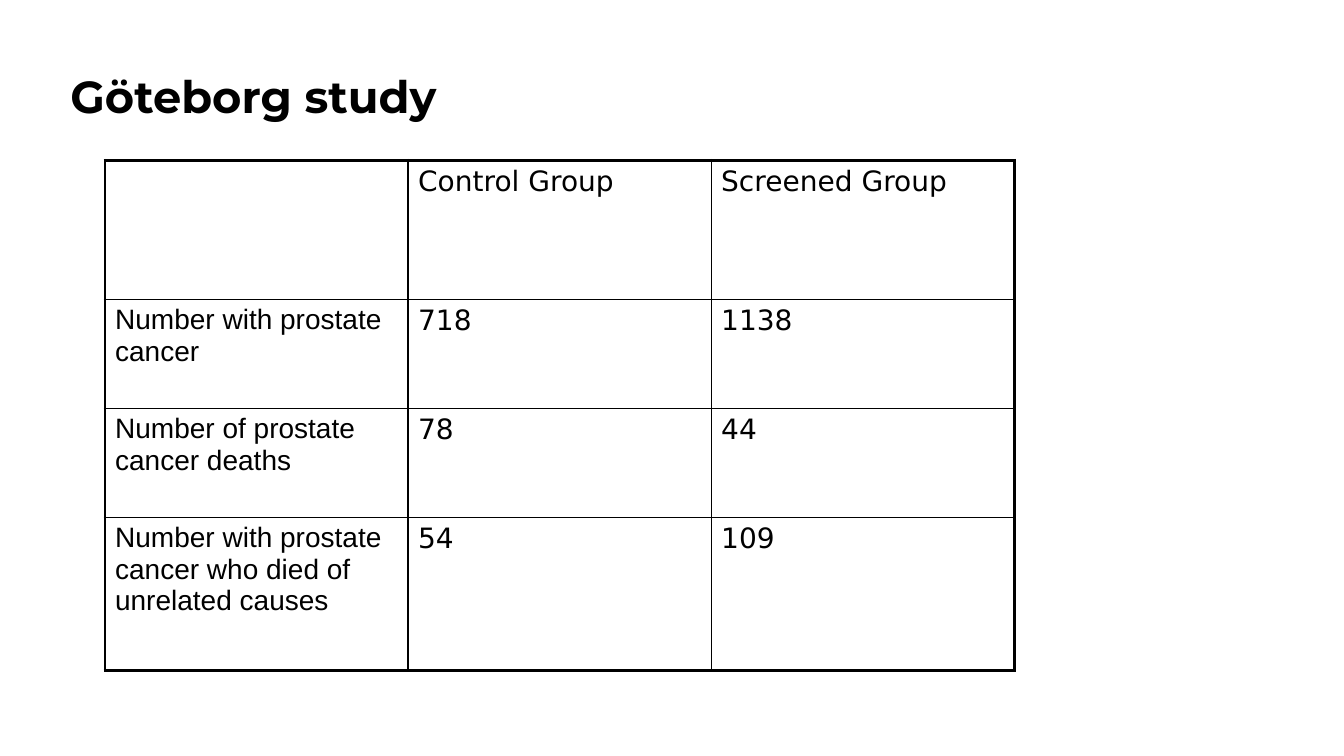
from lxml import etree
from pptx import Presentation
from pptx.dml.color import RGBColor
from pptx.enum.text import MSO_ANCHOR
from pptx.oxml.ns import qn
from pptx.util import Pt

BOTTOM = MSO_ANCHOR.BOTTOM
BLACK = RGBColor(0, 0, 0)
WHITE = RGBColor(255, 255, 255)

OUTER_LINE, INNER_LINE = 2.25, 1
COLUMN_WIDTH = 216.5
ROW_HEIGHTS = [99.4, 77.9, 77.9, 109.5]
ROWS = [
    ["", "Control Group", "Screened Group"],
    ["Number with prostate cancer", "718", "1138"],
    ["Number of prostate cancer deaths", "78", "44"],
    ["Number with prostate cancer who died of unrelated causes", "54", "109"],
]

TITLE_FONT = {"name": "Montserrat", "size": Pt(32), "bold": True}
LABEL_FONT = {"name": "Arial", "size": Pt(20), "bold": False}
VALUE_FONT = {"name": "DejaVu Sans", "size": Pt(20), "bold": False}


def write(frame, text, font_format):
    """Put one formatted paragraph into a text frame."""
    para = frame.paragraphs[0]
    span = para.add_run()
    span.text = text
    for name, value in font_format.items():
        setattr(span.font, name, value)
    span.font.color.rgb = BLACK
    return para


def add_title(page, text):
    box = page.shapes.add_textbox(Pt(43.2), Pt(37.4), Pt(816), Pt(54))
    frame = box.text_frame
    frame.word_wrap = True
    frame.vertical_anchor = BOTTOM
    write(frame, text, TITLE_FONT).line_spacing = 0.9


def set_borders(cell, widths):
    """Draw the cell's edges; widths run left, right, top, bottom."""
    properties = cell._tc.get_or_add_tcPr()
    for index, (side, width) in enumerate(zip("LRTB", widths)):
        line = etree.Element(qn(f"a:ln{side}"), w=str(Pt(width)))
        fill = etree.SubElement(line, qn("a:solidFill"))
        etree.SubElement(fill, qn("a:srgbClr"), val=str(BLACK))
        properties.insert(index, line)


def add_study_table(page):
    row_count, column_count = len(ROWS), len(ROWS[0])
    table = page.shapes.add_table(
        row_count, column_count, Pt(75), Pt(114.5),
        Pt(COLUMN_WIDTH * column_count), Pt(sum(ROW_HEIGHTS))).table
    for column in table.columns:
        column.width = Pt(COLUMN_WIDTH)
    for row, height in zip(table.rows, ROW_HEIGHTS):
        row.height = Pt(height)

    for row_index, texts in enumerate(ROWS):
        for column_index, text in enumerate(texts):
            cell = table.cell(row_index, column_index)
            cell.fill.solid()
            cell.fill.fore_color.rgb = WHITE
            # Heavy lines only around the outside of the table
            on_edge = [column_index == 0, column_index == column_count - 1,
                       row_index == 0, row_index == row_count - 1]
            set_borders(cell, [OUTER_LINE if edge else INNER_LINE
                               for edge in on_edge])
            if text:
                write(cell.text_frame, text,
                      VALUE_FONT if column_index else LABEL_FONT)


def main():
    deck = Presentation()
    deck.slide_width, deck.slide_height = Pt(960), Pt(540)
    page = deck.slides.add_slide(deck.slide_layouts[6])
    add_title(page, "Göteborg study")
    add_study_table(page)
    deck.save("out.pptx")


if __name__ == "__main__":
    main()
